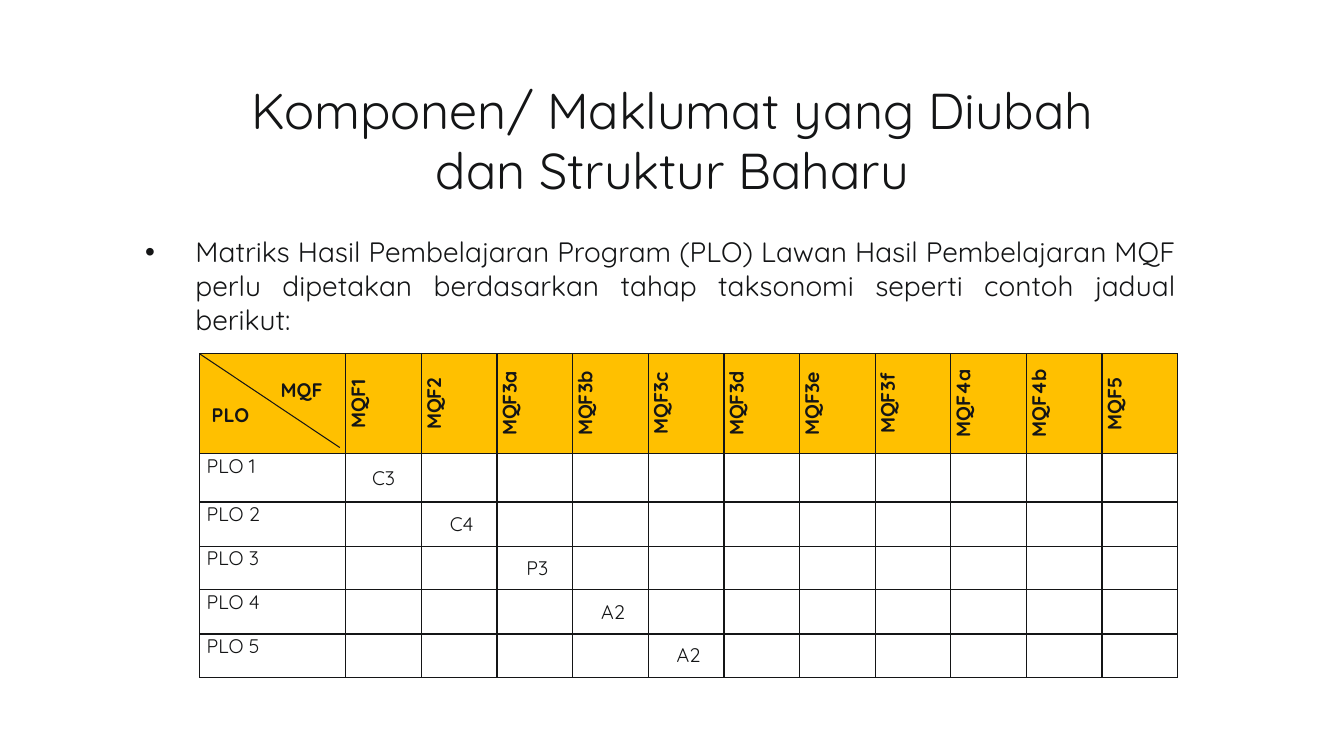
"""Build the slide that maps programme outcomes to MQF outcomes."""
import pptx
import pptx.util
import pptx.oxml
import pptx.dml.color
import pptx.enum.text
import pptx.enum.shapes

Inches, Pt = pptx.util.Inches, pptx.util.Pt
RGBColor = pptx.dml.color.RGBColor
ALIGN = pptx.enum.text.PP_ALIGN
ANCHOR = pptx.enum.text.MSO_ANCHOR

TITLE = ["Komponen/ Maklumat yang Diubah", "dan Struktur Baharu"]
BODY = ("Matriks Hasil Pembelajaran Program (PLO) Lawan Hasil Pembelajaran MQF "
        "perlu dipetakan berdasarkan tahap taksonomi seperti contoh jadual berikut:")
HEADS = ["MQF1", "MQF2", "MQF3a", "MQF3b", "MQF3c", "MQF3d",
         "MQF3e", "MQF3f", "MQF4a", "MQF4b", "MQF5"]
MARKS = [("PLO 1", "C3"), ("PLO 2", "C4"), ("PLO 3", "P3"),
         ("PLO 4", "A2"), ("PLO 5", "A2")]
ROWS = [0.99, 0.48, 0.44, 0.43, 0.44, 0.43]
COLS = [1.45] + [0.75] * len(HEADS)
LEFT, TOP, WIDTH = 1.98, 3.51, 9.71

FONT = "Quicksand"
INK = RGBColor(0x14, 0x15, 0x16)
GOLD = RGBColor(0xFF, 0xC0, 0x00)
NS = 'xmlns:a="http://schemas.openxmlformats.org/drawingml/2006/main"'


def node(text):
    """Parse one drawing element."""
    return pptx.oxml.parse_xml(text.replace(">", f" {NS}>", 1)
                               if "/>" not in text.split(">")[0] + ">"
                               else text.replace("/>", f" {NS}/>", 1))


def write(para, text, size, align, bold=False):
    """Add one styled run to a paragraph."""
    para.alignment = align
    run = para.add_run()
    run.text = text
    run.font.name, run.font.size, run.font.bold = FONT, Pt(size), bold
    run.font.color.rgb = INK


def frame(cell):
    """Set the borders and margins of a cell."""
    props = cell._tc.get_or_add_tcPr()
    for side in "LRTB":
        props.append(node(f'<a:ln{side} w="12700"><a:solidFill><a:srgbClr val="{INK}"/>'
                          f'</a:solidFill></a:ln{side}>'))
    cell.margin_left = cell.margin_right = Inches(0.07)
    cell.margin_top = cell.margin_bottom = 0


def add_title(slide):
    """Place the title."""
    title = slide.shapes.title
    title.left, title.top = Inches(0.67), Inches(0.76)
    title.width, title.height = Inches(12), Inches(1.25)
    title.text_frame.vertical_anchor = ANCHOR.MIDDLE
    para = title.text_frame.paragraphs[0]
    write(para, TITLE[0], 36, ALIGN.CENTER)
    para.add_line_break()
    write(para, TITLE[1], 36, ALIGN.CENTER)


def add_body(slide):
    """Place the bulleted text."""
    box = slide.shapes.add_textbox(Inches(1.34), Inches(2.28), Inches(10.42), Inches(1.15))
    box.text_frame.word_wrap = True
    para = box.text_frame.paragraphs[0]
    props = para._p.get_or_add_pPr()
    props.set("marL", str(Inches(0.5)))
    props.set("indent", str(Inches(-0.5)))
    props.append(node('<a:buFont typeface="Arial"/>'))
    props.append(node('<a:buChar char="•"/>'))
    write(para, BODY, 20, ALIGN.JUSTIFY)


def add_grid(slide):
    """Place the table and fill its diagonal."""
    grid = slide.shapes.add_table(len(ROWS), len(COLS), Inches(LEFT), Inches(TOP),
                                  Inches(WIDTH), Inches(sum(ROWS))).table
    grid.first_row = grid.horz_banding = False
    for row, high in zip(grid.rows, ROWS):
        row.height = Inches(high)
    for col, wide in zip(grid.columns, COLS):
        col.width = Inches(wide)
    for cell in grid.iter_cells():
        frame(cell)
        cell.fill.background()
    for cell in grid.rows[0].cells:
        cell.fill.solid()
        cell.fill.fore_color.rgb = GOLD

    first = grid.cell(0, 0)
    first.margin_left, first.margin_right = Inches(0.12), Inches(0.23)
    first.margin_top = Inches(0.24)
    write(first.text_frame.paragraphs[0], "MQF", 14, ALIGN.RIGHT, True)
    write(first.text_frame.add_paragraph(), "PLO", 14, ALIGN.LEFT, True)

    for at, head in enumerate(HEADS, 1):
        cell = grid.cell(0, at)
        cell.vertical_anchor = ANCHOR.MIDDLE
        cell._tc.get_or_add_tcPr().set("vert", "vert270")
        write(cell.text_frame.paragraphs[0], head, 14, ALIGN.CENTER, True)

    for at, (name, mark) in enumerate(MARKS, 1):
        write(grid.cell(at, 0).text_frame.paragraphs[0], name, 14, ALIGN.JUSTIFY)
        cell = grid.cell(at, at)
        cell.vertical_anchor = ANCHOR.MIDDLE
        cell.margin_left = Inches(0.07 if at == 1 else 0.12)
        write(cell.text_frame.paragraphs[0], mark, 14, ALIGN.CENTER)


def add_slash(slide):
    """Draw the line across the corner cell."""
    slash = slide.shapes.add_connector(
        pptx.enum.shapes.MSO_CONNECTOR.STRAIGHT,
        Inches(LEFT), Inches(TOP), Inches(3.37), Inches(4.44))
    slash.line.color.rgb = INK
    slash.line.width = Pt(0.75)
    slash._element.spPr.append(node("<a:effectLst/>"))


def main():
    """Build and save the deck."""
    deck = pptx.Presentation()
    deck.slide_width, deck.slide_height = Inches(13.33), Inches(7.5)
    slide = deck.slides.add_slide(deck.slide_layouts[5])
    add_title(slide)
    add_body(slide)
    add_grid(slide)
    add_slash(slide)
    deck.save("out.pptx")


if __name__ == "__main__":
    main()
